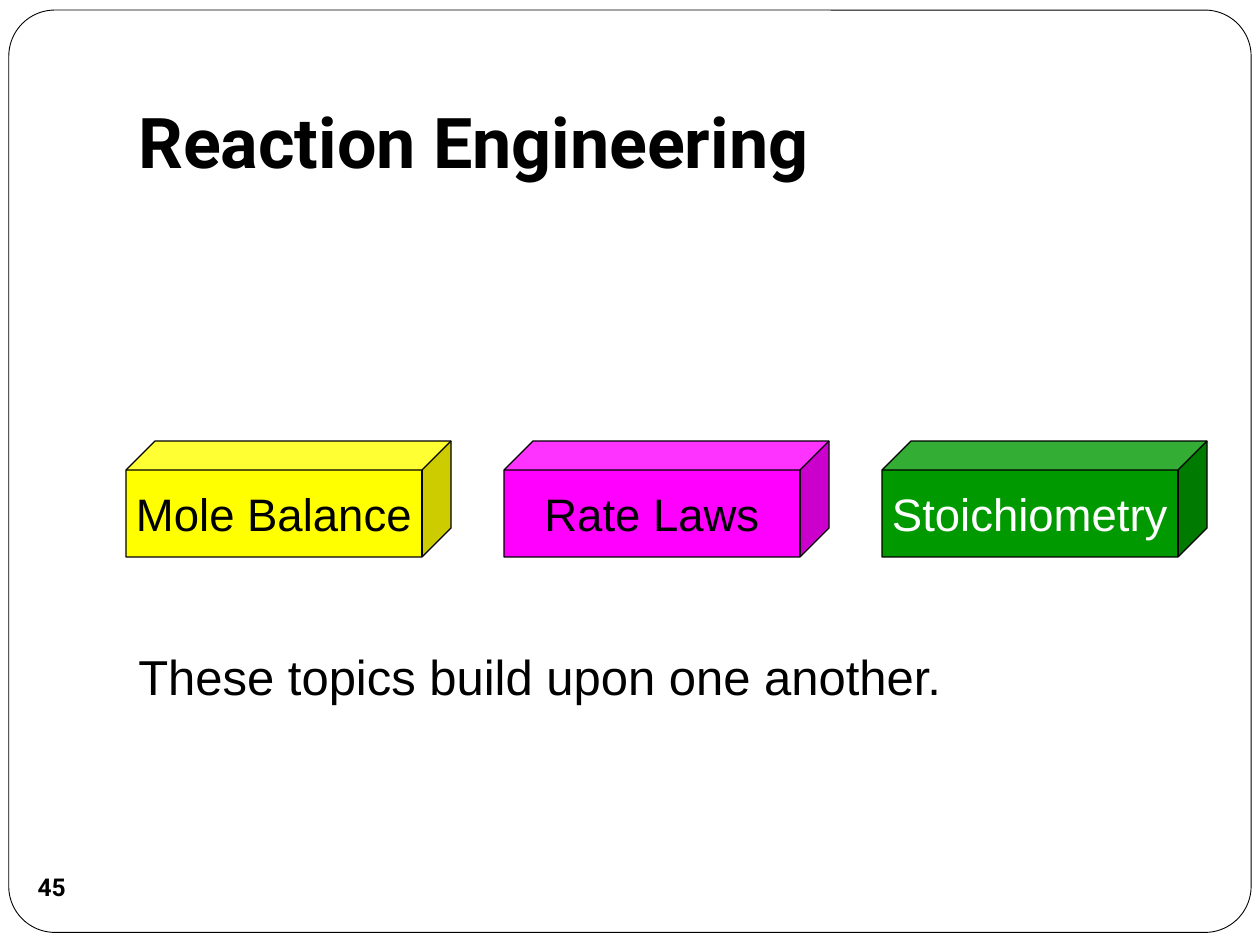
from pptx import Presentation
from pptx.dml.color import RGBColor
from pptx.enum.shapes import MSO_SHAPE
from pptx.enum.text import MSO_ANCHOR, PP_ALIGN
from pptx.util import Inches, Pt

CUBE, FRAME, OVAL = MSO_SHAPE.CUBE, MSO_SHAPE.ROUNDED_RECTANGLE, MSO_SHAPE.OVAL
LEFT, CENTER = PP_ALIGN.LEFT, PP_ALIGN.CENTER
TOP, MIDDLE, BOTTOM = MSO_ANCHOR.TOP, MSO_ANCHOR.MIDDLE, MSO_ANCHOR.BOTTOM


def write(shape, text, size, font="Arial", color="000000", bold=False,
          align=CENTER, anchor=MIDDLE, wrap=False, insets=(0.1, 0.05, 0.1, 0.05)):
    """Fill the shape with one formatted line; insets are left, top, right, bottom."""
    frame = shape.text_frame
    frame.word_wrap = wrap
    frame.vertical_anchor = anchor
    (frame.margin_left, frame.margin_top,
     frame.margin_right, frame.margin_bottom) = map(Inches, insets)
    paragraph = frame.paragraphs[0]
    paragraph.alignment = align
    run = paragraph.add_run()
    run.text = text
    run.font.size = Pt(size)
    run.font.name = font
    run.font.bold = bold
    run.font.color.rgb = RGBColor.from_string(color)


def add_shape(kind, left, top, width, height, fill=None, line_width=None):
    shape = slide.shapes.add_shape(kind, Inches(left), Inches(top),
                                   Inches(width), Inches(height))
    shape.shadow.inherit = False
    if fill:
        shape.fill.solid()
        shape.fill.fore_color.rgb = RGBColor.from_string(fill)
    else:
        shape.fill.background()
    if line_width:
        shape.line.color.rgb = RGBColor.from_string("000000")
        shape.line.width = Pt(line_width)
    else:
        shape.line.fill.background()
    return shape


prs = Presentation()
prs.slide_width, prs.slide_height = Inches(10), Inches(7.5)
slide = prs.slides.add_slide(prs.slide_layouts[5])

border = add_shape(FRAME, 0.07, 0.08, 9.86, 7.32, line_width=0.5)
border.adjustments[0] = 0.05

title = slide.shapes.title
title.left, title.top = Inches(1), Inches(0.3)
title.width, title.height = Inches(8.5), Inches(1.25)
write(title, "Reaction Engineering", 40, font="Roboto", bold=True, align=LEFT,
      anchor=BOTTOM, wrap=True, insets=(0.1, 0.05, 0.1, 0.1))

topics = [
    ("Mole Balance", "FFFF00", "000000"),
    ("Rate Laws", "FF00FF", "000000"),
    ("Stoichiometry", "009900", "FFFFFF"),
]
for column, (topic, fill, color) in enumerate(topics):
    block = add_shape(CUBE, 1 + 3 * column, 3.5, 2.58, 0.92, fill, 0.75)
    write(block, topic, 26, color=color)

remark = slide.shapes.add_textbox(Inches(1), Inches(5.08), Inches(8), Inches(0.57))
write(remark, "These topics build upon one another.", 28, align=LEFT,
      anchor=TOP, wrap=True)

page_number = add_shape(OVAL, 0.16, 6.79, 0.5, 0.5)
write(page_number, "45", 14, font="Roboto", bold=True, insets=(0, 0, 0, 0))

prs.save("out.pptx")
